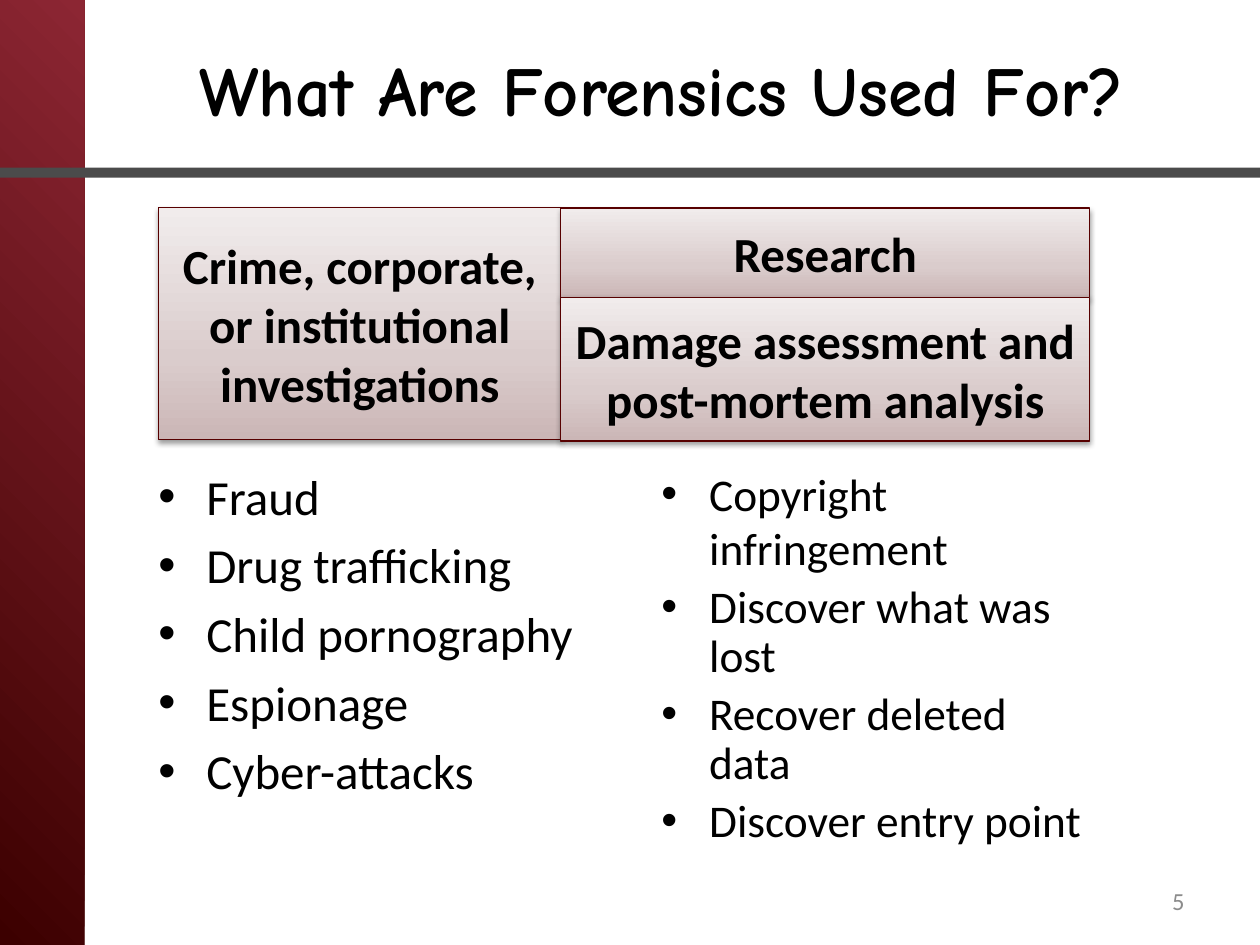
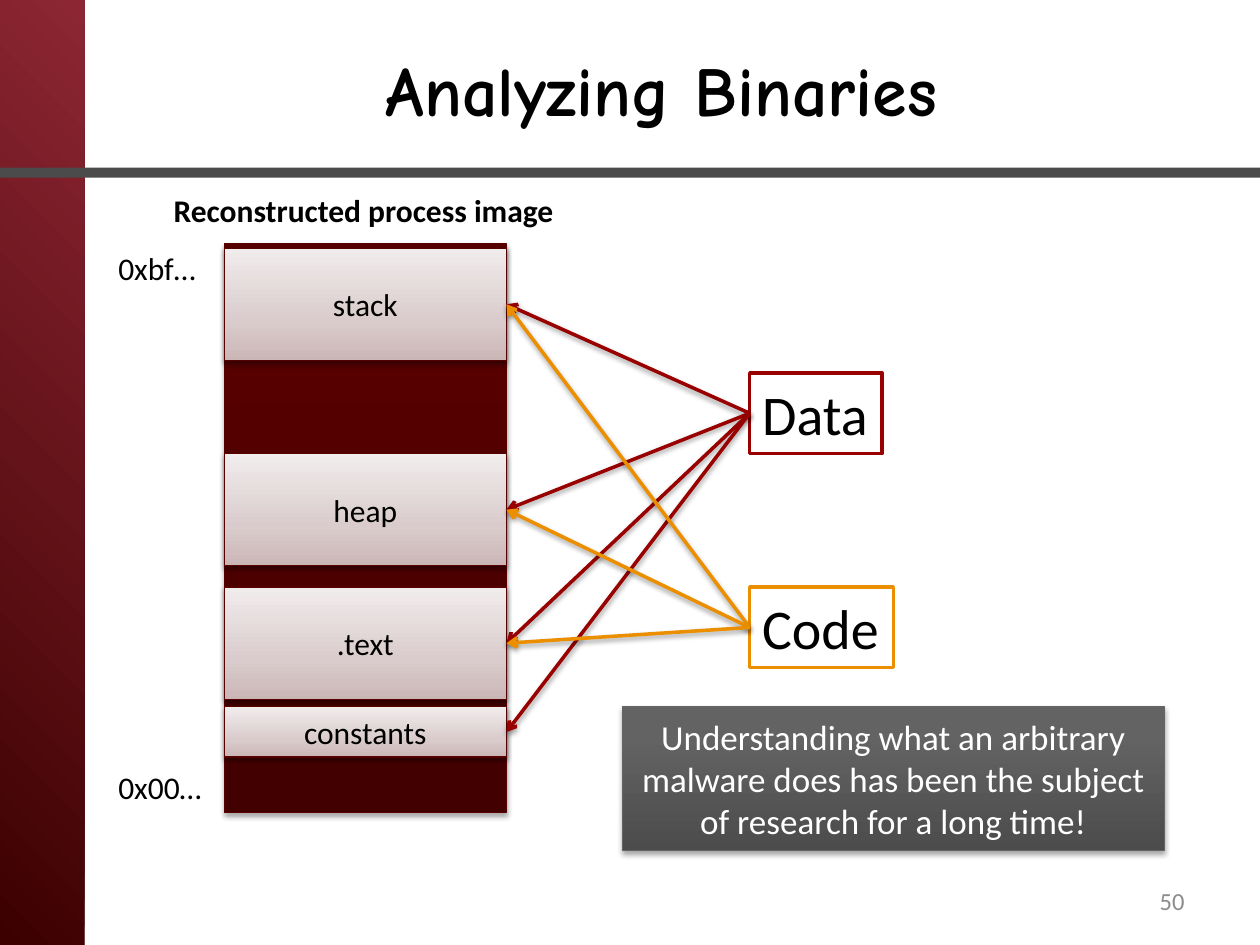
"""Build two slides on digital forensics: its uses, and the analysis of binaries."""
from dataclasses import dataclass

from lxml import etree
from pptx import Presentation
from pptx.dml.color import RGBColor
from pptx.enum.shapes import MSO_CONNECTOR, MSO_SHAPE
from pptx.enum.text import MSO_ANCHOR, MSO_AUTO_SIZE, PP_ALIGN
from pptx.oxml.ns import qn
from pptx.util import Inches, Pt


@dataclass(frozen=True)
class Theme:
    """Colours, fonts and type sizes of the deck."""
    body_font: str = "Calibri"
    title_font: str = "Comic Neue"
    black: str = "000000"
    white: str = "FFFFFF"
    maroon: str = "570000"
    red: str = "990000"
    orange: str = "EB8F00"
    rule: str = "4B4B4B"
    page_grey: str = "8C8C8C"
    note_line: str = "646464"
    side_band: tuple = ((0, "3C0000"), (100, "8C2633"))
    pale: tuple = ((0, "CBB6B6"), (35, "DACCCC"), (100, "F1ECEC"))
    dark: tuple = ((0, "420000"), (80, "560000"), (100, "570000"))
    grey: tuple = ((0, "4C4C4C"), (80, "636363"), (100, "636363"))
    title_size: float = 40
    tag_size: float = 32
    large_size: float = 28
    fitted_size: float = 25.9
    note_size: float = 20
    label_size: float = 18
    page_size: float = 14


class Deck:
    """Holds the theme and the current slide, and draws each kind of element."""

    def __init__(self, theme):
        """Start an empty 10 by 7.5 inch presentation."""
        self.theme = theme
        self.presentation = Presentation()
        self.presentation.slide_width = Inches(10)
        self.presentation.slide_height = Inches(7.5)
        self.slide = None

    def start_slide(self, heading, page):
        """Add a slide with its bands, title and page number."""
        theme = self.theme
        self.slide = self.presentation.slides.add_slide(self.presentation.slide_layouts[5])
        self.box(0, 0, 0.67, 7.5, theme.side_band, angle=45)
        self.box(0, 1.33, 10, 0.08, theme.rule)
        title = self.slide.shapes.title
        title.left, title.top, title.width, title.height = map(Inches, (1, 0.15, 8.5, 1.1))
        title.text_frame.auto_size = MSO_AUTO_SIZE.NONE
        self.put_text(title, heading, theme.title_size, bold=True, font=theme.title_font,
                      align=PP_ALIGN.CENTER, anchor=MSO_ANCHOR.MIDDLE)
        self.text(7.67, 6.95, 1.83, 0.4, page, theme.page_size, color=theme.page_grey,
                  align=PP_ALIGN.RIGHT, anchor=MSO_ANCHOR.MIDDLE)

    def style_run(self, run, size, color=None, bold=False, font=None):
        """Give a run its font, size and colour."""
        run.font.name = font or self.theme.body_font
        run.font.size = Pt(size)
        run.font.bold = bold
        run.font.color.rgb = RGBColor.from_string(color or self.theme.black)

    def put_text(self, shape, wording, size, align=PP_ALIGN.LEFT, anchor=MSO_ANCHOR.TOP,
                 wrap=True, **style):
        """Put one paragraph into a shape."""
        frame = shape.text_frame
        frame.word_wrap = wrap
        frame.vertical_anchor = anchor
        paragraph = frame.paragraphs[0]
        paragraph.alignment = align
        run = paragraph.add_run()
        run.text = wording
        self.style_run(run, size, **style)

    def text(self, left, top, width, height, wording, size, **style):
        """Add a text box with one paragraph."""
        area = self.slide.shapes.add_textbox(*map(Inches, (left, top, width, height)))
        self.put_text(area, wording, size, **style)

    def add_shadow(self, effects, alpha=38, blur=3.1, distance=1.6):
        """Put a soft downward shadow into an effect list."""
        shadow = etree.SubElement(effects, qn("a:outerShdw"), blurRad=str(Pt(blur)),
                                  dist=str(Pt(distance)), dir="5400000", rotWithShape="0")
        color = etree.SubElement(shadow, qn("a:srgbClr"), val=self.theme.black)
        etree.SubElement(color, qn("a:alpha"), val=str(alpha * 1000))

    def paint(self, shape, fill, angle):
        """Fill a shape with one colour or with gradient stops."""
        if isinstance(fill, str):
            shape.fill.solid()
            shape.fill.fore_color.rgb = RGBColor.from_string(fill)
            return
        shape.fill.gradient()
        shape.fill.gradient_angle = angle
        stops = shape._element.spPr.find(qn("a:gradFill")).find(qn("a:gsLst"))
        for stop in list(stops):
            stops.remove(stop)
        for position, color in fill:
            stop = etree.SubElement(stops, qn("a:gs"), pos=str(position * 1000))
            etree.SubElement(stop, qn("a:srgbClr"), val=color)

    def box(self, left, top, width, height, fill, line=None, weight=0.75, angle=90, shadow=None):
        """Add a rectangle with its fill, outline and optional shadow."""
        shape = self.slide.shapes.add_shape(
            MSO_SHAPE.RECTANGLE, *map(Inches, (left, top, width, height)))
        shape.shadow.inherit = False
        self.paint(shape, fill, angle)
        if line:
            shape.line.color.rgb = RGBColor.from_string(line)
            shape.line.width = Pt(weight)
        else:
            shape.line.fill.background()
        if shadow:
            self.add_shadow(shape._element.spPr.find(qn("a:effectLst")), **shadow)
        return shape

    def panel(self, left, top, width, height, wording, size, bold=False):
        """Add a pale shaded box with centred wording."""
        shape = self.box(left, top, width, height, self.theme.pale, self.theme.maroon,
                         shadow={"alpha": 38})
        self.put_text(shape, wording, size, bold=bold, align=PP_ALIGN.CENTER,
                      anchor=MSO_ANCHOR.MIDDLE)
        return shape

    def tag(self, left, top, width, wording, color):
        """Add a white box outlined in a colour."""
        shape = self.box(left, top, width, 0.64, self.theme.white, color, weight=2)
        self.put_text(shape, wording, self.theme.tag_size, wrap=False)
        return shape

    def bullets(self, left, items, size, spacing=1.0):
        """Add a bulleted list whose text casts a shadow."""
        area = self.slide.shapes.add_textbox(*map(Inches, (left, 3.65, 3.6, 3.3)))
        frame = area.text_frame
        frame.word_wrap = True
        for index, item in enumerate(items):
            paragraph = frame.add_paragraph() if index else frame.paragraphs[0]
            properties = paragraph._p.get_or_add_pPr()
            properties.set("marL", str(Inches(0.38)))
            properties.set("indent", str(-Inches(0.38)))
            etree.SubElement(properties, qn("a:buFont"), typeface="Arial")
            etree.SubElement(properties, qn("a:buChar"), char="•")
            if index:
                paragraph.space_before = Pt(round(size * 0.2, 1))
                paragraph.line_spacing = spacing
            run = paragraph.add_run()
            run.text = item
            self.style_run(run, size)
            effects = etree.Element(qn("a:effectLst"))
            self.add_shadow(effects, alpha=43, blur=3, distance=3)
            run._r.rPr.find(qn("a:solidFill")).addnext(effects)

    def arrow(self, source, target, color):
        """Join the left side of one box to the right side of another."""
        connector = self.slide.shapes.add_connector(MSO_CONNECTOR.STRAIGHT, 0, 0, 0, 0)
        connector.begin_connect(source, 1)
        connector.end_connect(target, 3)
        connector.line.color.rgb = RGBColor.from_string(color)
        connector.line.width = Pt(2)
        properties = connector._element.spPr
        etree.SubElement(properties.find(qn("a:ln")), qn("a:tailEnd"), type="arrow")
        self.add_shadow(etree.SubElement(properties, qn("a:effectLst")))


def build_uses(deck):
    """Draw the slide on the uses of forensics."""
    theme = deck.theme
    deck.start_slide("What Are Forensics Used For?", "5")
    for left, top, width, height, use in (
        (1.26, 1.65, 3.19, 1.84, "Crime, corporate, or institutional investigations"),
        (4.45, 1.65, 4.2, 0.71, "Research"),
        (4.45, 2.36, 4.2, 1.14, "Damage assessment and post-mortem analysis"),
    ):
        deck.panel(left, top, width, height, use, theme.large_size, bold=True)
    deck.bullets(1.16, ("Fraud", "Drug trafficking", "Child pornography", "Espionage",
                        "Cyber-attacks"), theme.large_size)
    deck.bullets(5.15, ("Copyright infringement", "Discover what was lost",
                        "Recover deleted data", "Discover entry point"),
                 theme.fitted_size, spacing=0.9)


def build_binaries(deck):
    """Draw the slide on the memory layout of a binary."""
    theme = deck.theme
    deep_shadow = {"alpha": 35, "distance": 1.8}
    deck.start_slide("Analyzing Binaries", "50")
    deck.box(1.78, 1.93, 2.24, 4.52, theme.dark, theme.maroon, shadow=deep_shadow)
    deck.text(1.28, 1.47, 3.26, 0.4, "Reconstructed process image", theme.label_size,
              bold=True, wrap=False)
    for top, width, address in ((1.93, 0.82, "0xbf…"), (6.05, 0.89, "0x00…")):
        deck.text(0.84, top, width, 0.4, address, theme.label_size, wrap=False)
    segments = [
        deck.panel(1.78, top, 2.24, height, segment, theme.label_size)
        for top, height, segment in ((1.97, 0.89, "stack"), (3.6, 0.89, "heap"),
                                     (4.66, 0.89, ".text"), (5.61, 0.4, "constants"))
    ]
    data = deck.tag(5.95, 2.96, 1.05, "Data", theme.red)
    code = deck.tag(5.95, 4.66, 1.14, "Code", theme.orange)
    for source, targets, color in ((data, segments, theme.red),
                                   (code, segments[:3], theme.orange)):
        for segment in targets:
            deck.arrow(source, segment, color)
    remark = deck.box(4.94, 5.61, 4.3, 1.14, theme.grey, theme.note_line, shadow=deep_shadow)
    deck.put_text(remark, "Understanding what an arbitrary malware does has been the subject "
                  "of research for a long time!", theme.note_size, color=theme.white,
                  align=PP_ALIGN.CENTER, anchor=MSO_ANCHOR.MIDDLE)


def main():
    """Build and save the presentation."""
    deck = Deck(Theme())
    build_uses(deck)
    build_binaries(deck)
    deck.presentation.save("out.pptx")


if __name__ == "__main__":
    main()
